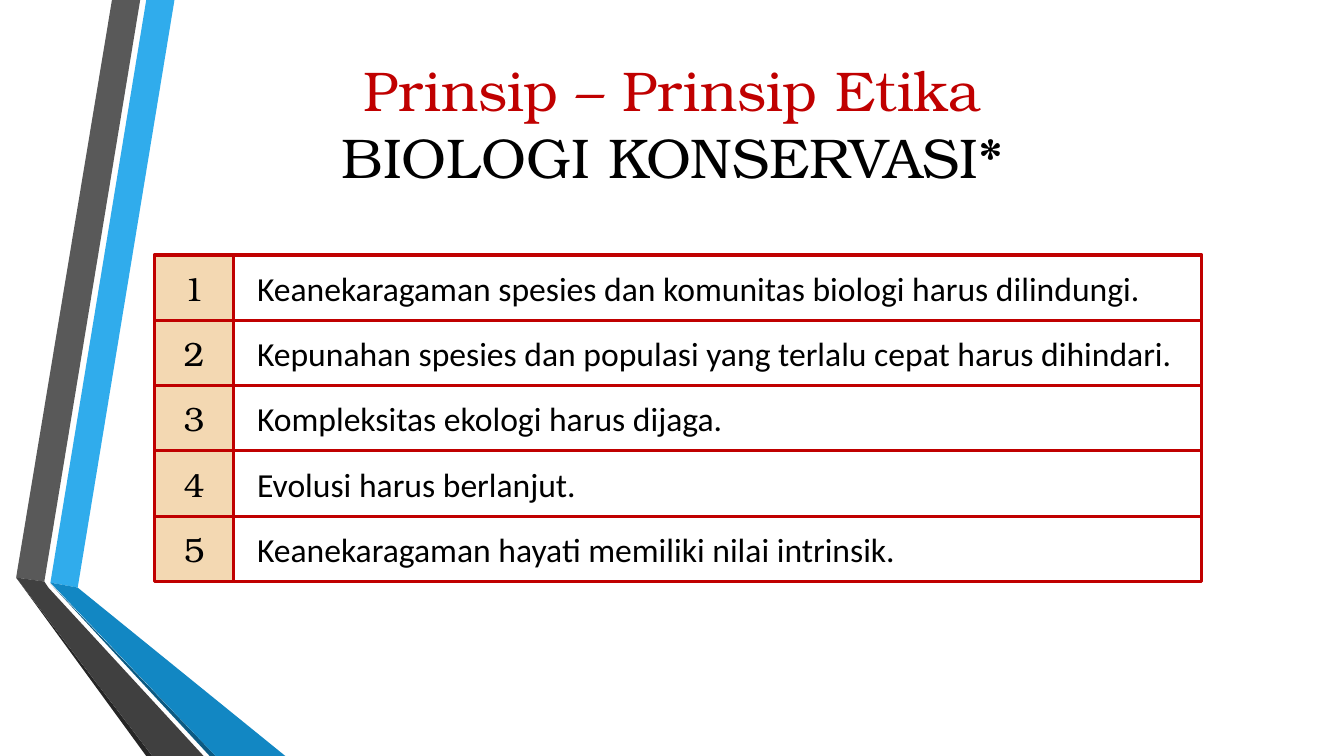
from pptx import Presentation
from pptx.dml.color import RGBColor
from pptx.enum.shapes import MSO_SHAPE as Shape
from pptx.enum.text import MSO_ANCHOR as Anchor, PP_ALIGN as Align
from pptx.util import Inches, Pt

RED = RGBColor(0xC0, 0x00, 0x00)
BLACK = RGBColor(0x00, 0x00, 0x00)
SAND = RGBColor(0xF3, 0xD8, 0xB2)
SKY = RGBColor(0x30, 0xAC, 0xEC)
BLUE = RGBColor(0x12, 0x87, 0xC3)
NAVY = RGBColor(0x0C, 0x5A, 0x82)
GREY = RGBColor(0x59, 0x59, 0x59)
DARK = RGBColor(0x40, 0x40, 0x40)
COAL = RGBColor(0x26, 0x26, 0x26)

SERIF = "TeX Gyre Bonum"
SANS = "Calibri"

# Ribbon corners, in percent of the slide's width and height
RIBBONS = [
    (SKY, [(3.75, 77.07), (5.78, 77.73), (12.98, 0), (10.88, 0)]),
    (GREY, [(10.43, 0), (8.33, 0), (1.2, 76.4), (3.3, 76.93)]),
    (COAL, [(1.2, 76.4), (10.88, 100), (11.33, 100)]),
    (NAVY, [(3.75, 77.2), (15.6, 100), (16.05, 100)]),
    (BLUE, [(3.75, 77.07), (16.05, 100), (21.23, 100), (5.78, 77.73)]),
    (DARK, [(15.15, 100), (3.6, 77.73), (3.3, 76.93), (1.2, 76.4), (11.33, 100)]),
]

RULES = [
    "Keanekaragaman spesies dan komunitas biologi harus dilindungi.",
    "Kepunahan spesies dan populasi yang terlalu cepat harus dihindari.",
    "Kompleksitas ekologi harus dijaga.",
    "Evolusi harus berlanjut.",
    "Keanekaragaman hayati memiliki nilai intrinsik.",
]

# Table grid, in percent of the slide
LEFT, SPLIT, RIGHT = 11.48, 17.4, 89.42
TOP, ROW = 33.73, 8.64


class Deck:
    """Holds the presentation, its current slide and the shared style."""

    def __init__(self):
        self.prs = Presentation()
        self.prs.slide_width = Inches(13.33)
        self.prs.slide_height = Inches(7.5)
        self.slide = self.prs.slides.add_slide(self.prs.slide_layouts[6])
        self.shapes = self.slide.shapes

    def spot(self, x, y):
        """Turn percent of the slide into lengths."""
        return (round(self.prs.slide_width * x / 100),
                round(self.prs.slide_height * y / 100))

    def ribbon(self, color, corners):
        start, *rest = [self.spot(x, y) for x, y in corners]
        form = self.shapes.build_freeform(*start)
        form.add_line_segments(rest, close=True)
        shape = form.convert_to_shape()
        shape.shadow.inherit = False
        shape.fill.solid()
        shape.fill.fore_color.rgb = color
        shape.line.fill.background()

    def title(self, x, y, wide, high, lines, size=40):
        box = self.shapes.add_textbox(*self.spot(x, y), *self.spot(wide, high))
        frame = box.text_frame
        frame.word_wrap = True
        frame.vertical_anchor = Anchor.MIDDLE
        para = frame.paragraphs[0]
        para.alignment = Align.CENTER
        para.font.name = SERIF
        para.font.size = Pt(size)
        for i, (text, color) in enumerate(lines):
            if i:
                para.add_line_break()
            run = para.add_run()
            run.text = text
            run.font.color.rgb = color

    def cell(self, x, y, wide, high, text, font, align, fill=None, pad=0.1):
        box = self.shapes.add_shape(
            Shape.RECTANGLE, *self.spot(x, y), *self.spot(wide, high))
        box.shadow.inherit = False
        if fill is None:
            box.fill.background()
        else:
            box.fill.solid()
            box.fill.fore_color.rgb = fill
        box.line.color.rgb = RED
        box.line.width = Pt(2.25)
        frame = box.text_frame
        frame.word_wrap = True
        frame.vertical_anchor = Anchor.MIDDLE
        frame.margin_left = Inches(pad)
        para = frame.paragraphs[0]
        para.text = text
        para.alignment = align
        para.font.name = font
        para.font.size = Pt(24)
        para.font.color.rgb = BLACK

    def save(self):
        self.prs.save("out.pptx")


def main():
    deck = Deck()
    for color, corners in RIBBONS:
        deck.ribbon(color, corners)
    deck.title(6.9, 5.33, 86.27, 21.73, [
        ("Prinsip – Prinsip Etika", RED),
        ("BIOLOGI KONSERVASI*", BLACK),
    ])
    for i, rule in enumerate(RULES):
        y = TOP + i * ROW
        deck.cell(SPLIT, y, RIGHT - SPLIT, ROW, rule, SANS, Align.LEFT, pad=0.23)
        deck.cell(LEFT, y, SPLIT - LEFT, ROW, str(i + 1), SERIF, Align.CENTER, SAND)
    deck.save()


if __name__ == "__main__":
    main()
